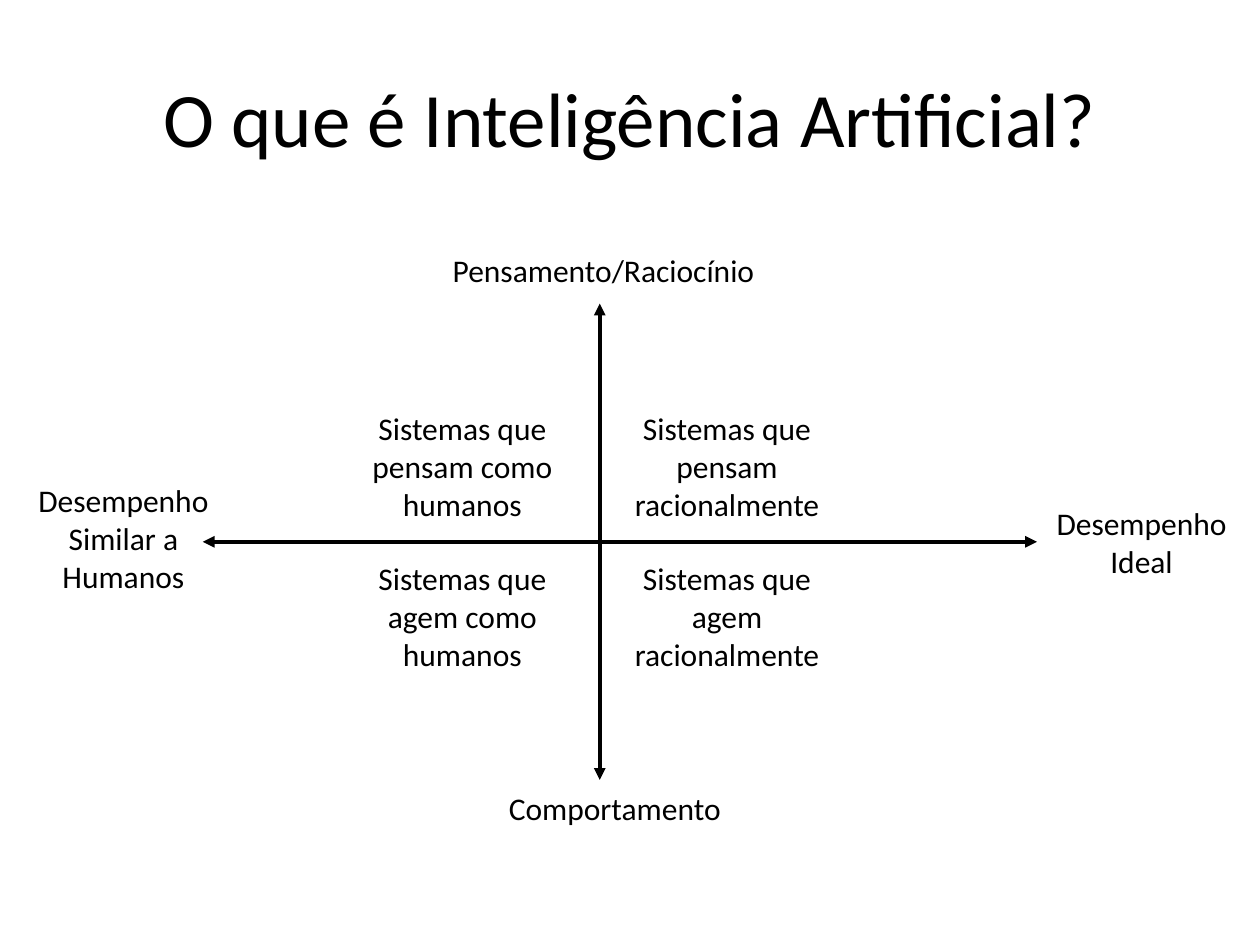
from pptx import Presentation, util as u
from pptx.dml.color import RGBColor
from pptx.enum import shapes, text
from pptx.oxml import parse_xml
from pptx.oxml.ns import nsdecls, qn

# Content
TITLE = "O que é Inteligência Artificial?"
ENDS = [  # words, centre x, top, width, height, wrap
    ("Pensamento/Raciocínio", 4.79, 1.94, 2.62, 0.4, False),
    ("Comportamento", 4.88, 6.21, 1.9, 0.4, False),
    ("Desempenho Similar a Humanos", 0.98, 3.77, 1.97, 1.01, True),
    ("Desempenho Ideal", 9.06, 3.95, 1.97, 0.71, True),
]
QUADS = [
    ["Sistemas que pensam como humanos", "Sistemas que pensam racionalmente"],
    ["Sistemas que agem como humanos", "Sistemas que agem racionalmente"],
]

# Theme and grid, in points and inches
THEME = {"font": "Calibri", "ink": RGBColor(0, 0, 0), "head": 44, "body": 18, "line": 2.25}
WIDE, HIGH = 10, 7.5
MID_X, MID_Y = 4.76, 4.3
LEFT, RIGHT = 1.61, 8.23
REACH = 1.89
COLS = [(3.67, 1.97), (5.77, 2.05)]  # centre x, width
ROWS = [3.2, 4.39]
TALL = 1.01

deck = Presentation()
deck.slide_width, deck.slide_height = u.Inches(WIDE), u.Inches(HIGH)
slide = deck.slides.add_slide(deck.slide_layouts[6])


def label(words, mid, top, wide, tall, wrap=True, size=THEME["body"],
          anchor=text.MSO_ANCHOR.TOP):
    box = slide.shapes.add_textbox(*map(u.Inches, (mid - wide / 2, top, wide, tall)))
    frame = box.text_frame
    frame.text = words
    frame.word_wrap = wrap
    frame.vertical_anchor = anchor
    para = frame.paragraphs[0]
    para.alignment = text.PP_ALIGN.CENTER
    font = para.runs[0].font
    font.name, font.size = THEME["font"], u.Pt(size)
    font.color.rgb = THEME["ink"]


def axis(*ends):
    line = slide.shapes.add_connector(shapes.MSO_CONNECTOR.STRAIGHT, *map(u.Inches, ends))
    line.line.color.rgb = THEME["ink"]
    line.line.width = u.Pt(THEME["line"])
    for tag in ("headEnd", "tailEnd"):
        line.line._get_or_add_ln().append(
            parse_xml(f'<a:{tag} {nsdecls("a")} type="triangle"/>'))
    props = line._element.find(qn("p:spPr"))
    props.append(parse_xml(f'<a:effectLst {nsdecls("a")}/>'))


# Title
label(TITLE, WIDE / 2, HIGH * 0.04, WIDE * 0.9, 1.25,
      size=THEME["head"], anchor=text.MSO_ANCHOR.MIDDLE)

# Axes and their end labels
axis(LEFT, MID_Y, RIGHT, MID_Y)
axis(MID_X, MID_Y - REACH, MID_X, MID_Y + REACH)
for end in ENDS:
    label(*end)

# Quadrants
for top, row in zip(ROWS, QUADS):
    for (mid, wide), words in zip(COLS, row):
        label(words, mid, top, wide, TALL)

deck.save("out.pptx")
